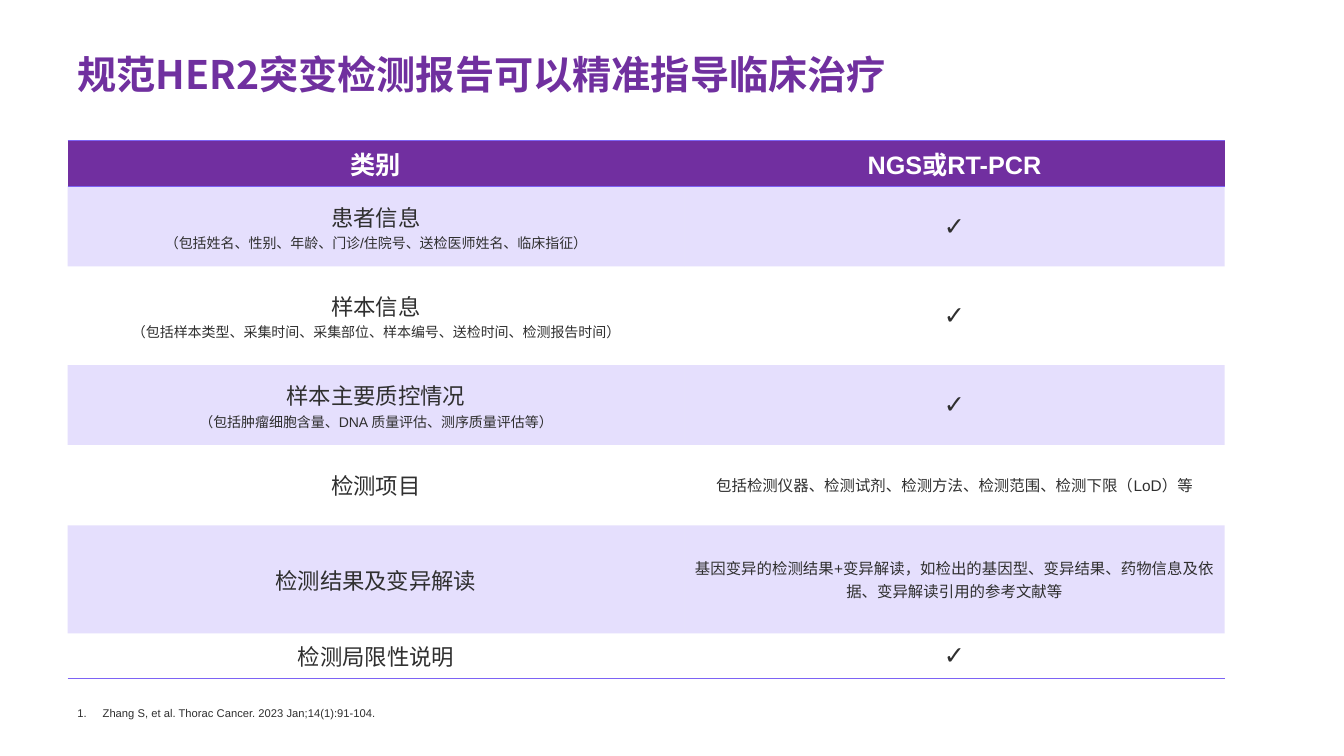
from dataclasses import dataclass

from lxml.etree import SubElement
from pptx import Presentation
from pptx.dml.color import RGBColor as Rgb
from pptx.enum.text import MSO_ANCHOR as Anchor, MSO_AUTO_SIZE as Fit, PP_ALIGN as Align
from pptx.oxml import parse_xml
from pptx.oxml.ns import nsdecls, qn
from pptx.util import Pt

HUES = {"title": "70309F", "head": "712FA0", "line": "7D63F5", "ink": "2F2F2F", "white": "FFFFFF"}
LATIN, EAST = "Arial", "Noto Sans CJK SC"
PLAIN = "{2D5ABB26-0587-4C30-8999-92F81FD0307C}"
LEFT = 48.24
COLS = (440.6, 385.9)
TICK = "✓"


@dataclass
class Row:
    high: float
    name: str
    result: str = TICK
    detail: str = ""


HEAD = Row(32.4, "类别", "NGS或RT-PCR")
ROWS = [
    Row(56.9, "患者信息", detail="（包括姓名、性别、年龄、门诊/住院号、送检医师姓名、临床指征）"),
    Row(70.6, "样本信息", detail="（包括样本类型、采集时间、采集部位、样本编号、送检时间、检测报告时间）"),
    Row(56.9, "样本主要质控情况", detail="（包括肿瘤细胞含量、DNA 质量评估、测序质量评估等）"),
    Row(57.6, "检测项目", "包括检测仪器、检测试剂、检测方法、检测范围、检测下限（LoD）等"),
    Row(77, "检测结果及变异解读",
        "基因变异的检测结果+变异解读，如检出的基因型、变异结果、药物信息及依据、变异解读引用的参考文献等"),
    Row(32.4, "检测局限性说明"),
]


def write(para, text: str, size: float, hue: str = "ink", bold: bool = False,
          align=Align.CENTER, latin: str = LATIN, east: str = EAST) -> None:
    para.alignment = align
    run = para.add_run()
    run.text = text
    font = run.font
    font.size, font.bold, font.name = Pt(size), bold, latin
    font.color.rgb = Rgb.from_string(HUES[hue])
    face = SubElement(run._r.get_or_add_rPr(), qn("a:ea"))
    face.set("typeface", east)


def shade(cell, hue: str, alpha: int = 100) -> None:
    """Fill a cell; alpha is its opacity in percent."""
    cell.fill.solid()
    cell.fill.fore_color.rgb = Rgb.from_string(HUES[hue])
    if alpha < 100:
        tone = cell._tc.tcPr.find(".//" + qn("a:srgbClr"))
        SubElement(tone, qn("a:alpha")).set("val", str(alpha * 1000))


def rule(cell, *sides: str) -> None:
    """Draw borders on the named sides, given in schema order (T before B)."""
    for side in reversed(sides):
        cell._tc.get_or_add_tcPr().insert(0, parse_xml(
            f'<a:ln{side} {nsdecls("a")} w="{Pt(1)}"><a:solidFill>'
            f'<a:srgbClr val="{HUES["line"]}"/></a:solidFill></a:ln{side}>'))


def add_title(slide) -> None:
    title = slide.shapes.title
    title.left, title.top, title.width, title.height = Pt(LEFT), Pt(36), Pt(855.4), Pt(49)
    frame = title.text_frame
    frame.word_wrap, frame.auto_size = True, Fit.NONE
    frame.vertical_anchor = Anchor.TOP
    para = frame.paragraphs[0]
    para.line_spacing = 0.9
    write(para, "规范HER2突变检测报告可以精准指导临床治疗", 28, "title", True, Align.LEFT, EAST)


def add_grid(slide) -> None:
    lines = [HEAD, *ROWS]
    frame = slide.shapes.add_table(len(lines), len(COLS), Pt(LEFT), Pt(100.08),
                                   Pt(sum(COLS)), Pt(sum(row.high for row in lines)))
    grid = frame.table
    grid.horz_banding = False
    grid._tbl.tblPr.find(qn("a:tableStyleId")).text = PLAIN
    for col, wide in zip(grid.columns, COLS):
        col.width = Pt(wide)
    for i, row in enumerate(lines):
        grid.rows[i].height = Pt(row.high)
        left, right = cells = grid.cell(i, 0), grid.cell(i, 1)
        for cell in cells:
            cell.vertical_anchor = Anchor.MIDDLE
            if i == 0:
                shade(cell, "head")
                rule(cell, "T", "B")
            elif i % 2:
                shade(cell, "line", 20)
            else:
                cell.fill.background()
            if row is lines[-1]:
                rule(cell, "B")
        first, second = (cell.text_frame.paragraphs[0] for cell in cells)
        if i == 0:
            write(first, row.name, 18, "white", True)
            write(second, row.result, 18, "white", True)
            continue
        write(first, row.name, 16)
        if row.detail:
            write(left.text_frame.add_paragraph(), row.detail, 10)
        if row.result == TICK:
            write(second, TICK, 18, east=LATIN)
        else:
            write(second, row.result, 11)


def add_source(slide) -> None:
    box = slide.shapes.add_textbox(Pt(LEFT), Pt(501.1), Pt(807.8), Pt(17))
    frame = box.text_frame
    frame.word_wrap, frame.auto_size = True, Fit.SHAPE_TO_FIT_TEXT
    para = frame.paragraphs[0]
    props = para._p.get_or_add_pPr()
    props.set("marL", str(Pt(18)))
    props.set("indent", str(Pt(-18)))
    SubElement(props, qn("a:buFont")).set("typeface", LATIN)
    SubElement(props, qn("a:buAutoNum")).set("type", "arabicPeriod")
    write(para, "Zhang S, et al. Thorac Cancer. 2023 Jan;14(1):91-104.", 8, align=Align.LEFT)


def main() -> None:
    deck = Presentation()
    deck.slide_width, deck.slide_height = Pt(960), Pt(540)
    slide = deck.slides.add_slide(deck.slide_layouts[5])
    add_title(slide)
    add_grid(slide)
    add_source(slide)
    deck.save("out.pptx")


if __name__ == "__main__":
    main()
